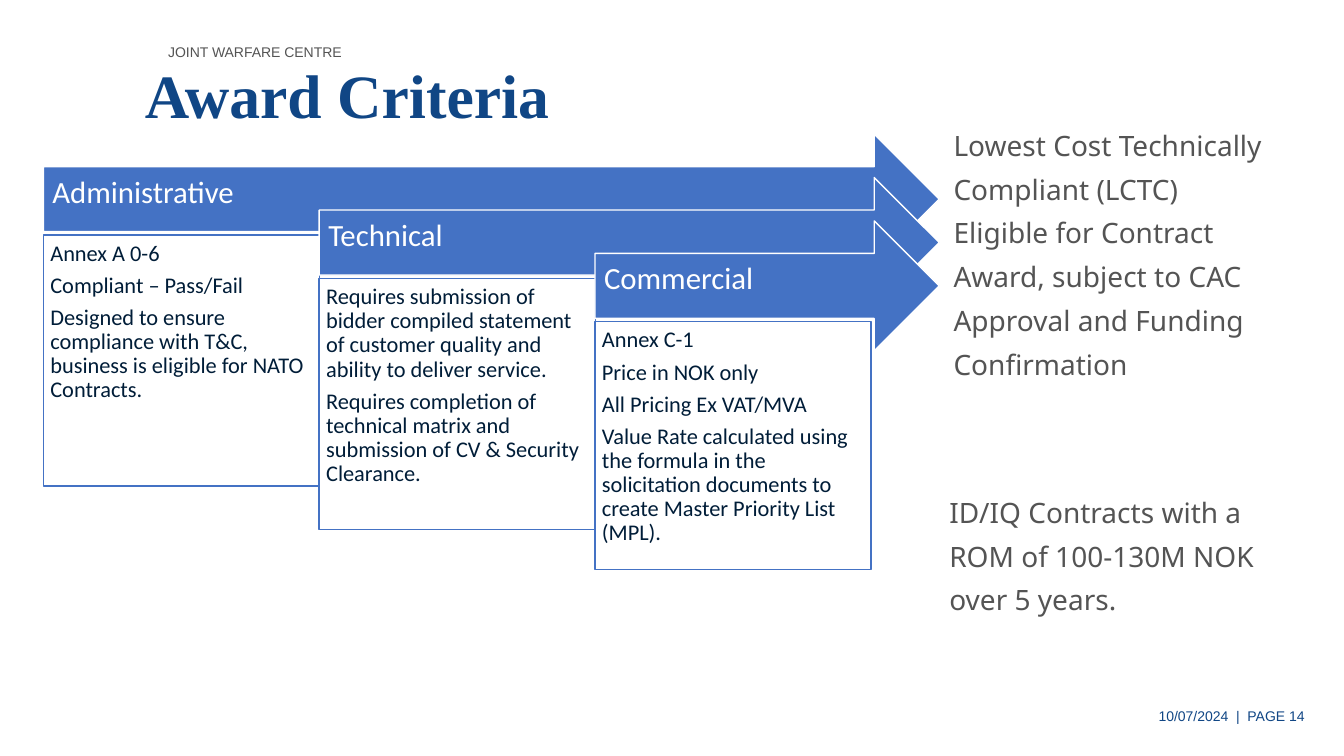
from pptx import Presentation
from pptx.dml.color import RGBColor
from pptx.enum.shapes import MSO_SHAPE as Shape
from pptx.enum.text import MSO_ANCHOR as Anchor, MSO_AUTO_SIZE as Fit, PP_ALIGN as Align
from pptx.util import Pt

NAVY = RGBColor(0x10, 0x46, 0x85)
GREY = RGBColor(0x54, 0x54, 0x54)
BLUE = RGBColor(0x44, 0x72, 0xC4)
INK = RGBColor(0x00, 0x1D, 0x38)
WHITE = RGBColor(0xFF, 0xFF, 0xFF)

STAGES = [
    ("Administrative", 179.3, [
        "Annex A 0-6",
        "Compliant – Pass/Fail",
        "Designed to ensure compliance with T&C, business is eligible for NATO Contracts.",
    ]),
    ("Technical", 179.3, [
        "Requires submission of bidder compiled statement of customer quality "
        "and ability to deliver service.",
        "Requires completion of technical matrix and submission of CV & Security Clearance.",
    ]),
    ("Commercial", 177, [
        "Annex C-1",
        "Price in NOK only",
        "All Pricing Ex VAT/MVA",
        "Value Rate calculated using the formula in the solicitation documents "
        "to create Master Priority List (MPL).",
    ]),
]
LEFT, TOP, RIGHT = 31, 95.8, 670.9
STEP, DROP = 197, 31
HEAD, GAP, WIDE = 92.9, 72, 197.3


class Board:
    def __init__(self, slide):
        self.slide = slide

    def label(self, shape, lines, font, size, color, bold=False, align=Align.LEFT,
              lead=1.0, after=0, anchor=Anchor.MIDDLE, pad=(7.2, 3.6, 7.2, 3.6)):
        """Fill the shape with styled text; pad is left, top, right, bottom."""
        frame = shape.text_frame
        frame.text = "\n".join(lines)
        frame.word_wrap = True
        frame.vertical_anchor = anchor
        frame.margin_left, frame.margin_top, frame.margin_right, frame.margin_bottom = map(Pt, pad)
        for para in frame.paragraphs:
            para.alignment = align
            para.line_spacing = lead
            para.space_after = Pt(after)
            for run in para.runs:
                run.font.name = font
                run.font.size = Pt(size)
                run.font.bold = bold
                run.font.color.rgb = color

    def text(self, box, lines, font, size, color, grow=False, **style):
        shape = self.slide.shapes.add_textbox(*map(Pt, box))
        self.label(shape, lines, font, size, color, **style)
        if grow:
            shape.text_frame.auto_size = Fit.SHAPE_TO_FIT_TEXT

    def block(self, kind, box, fill, line):
        shape = self.slide.shapes.add_shape(kind, *map(Pt, box))
        shape.shadow.inherit = False
        shape.fill.solid()
        shape.fill.fore_color.rgb = fill
        shape.line.color.rgb = line
        shape.line.width = Pt(1)
        return shape

    def stage(self, left, top, name, height, lines):
        """Draw an arrow with its heading and the details panel below it."""
        arrow = self.block(Shape.RIGHT_ARROW, (left, top, RIGHT - left, HEAD), BLUE, WHITE)
        self.label(arrow, [name], "Calibri", 22, WHITE, lead=0.9, after=7.7,
                   pad=(6.5, 6.5, 20, 15))
        panel = self.block(Shape.RECTANGLE, (left, top + GAP, WIDE, height), WHITE, BLUE)
        self.label(panel, lines, "Calibri", 16, INK, lead=0.9, after=5.6,
                   anchor=Anchor.TOP, pad=(5, 5, 5, 5))


def main():
    deck = Presentation()
    deck.slide_width, deck.slide_height = Pt(960), Pt(540)
    board = Board(deck.slides.add_slide(deck.slide_layouts[6]))

    board.text((113, 16, 425.5, 42.5), ["JOINT WARFARE CENTRE"], "Arial", 10, GREY)
    board.text((96.5, 18, 828, 104.4), ["Award Criteria"], "Times New Roman", 44, NAVY,
               bold=True, lead=0.9)
    board.text((722.9, 496.8, 216, 28.8), ["10/07/2024  |  PAGE 14"], "Arial", 10, NAVY,
               align=Align.RIGHT)

    for i, (name, height, lines) in enumerate(STAGES):
        board.stage(LEFT + i * STEP, TOP + i * DROP, name, height, lines)

    board.text((674, 95.8, 265, 164.9), [
        "Lowest Cost Technically Compliant (LCTC)",
        "Eligible for Contract Award, subject to CAC Approval and Funding Confirmation",
    ], "Noto Sans", 20, GREY, grow=True, lead=1.3)
    board.text((671, 342.7, 265, 101.5),
               ["ID/IQ Contracts with a ROM of 100-130M NOK over 5 years."],
               "Noto Sans", 20, GREY, grow=True, lead=1.3)

    deck.save("out.pptx")


if __name__ == "__main__":
    main()
